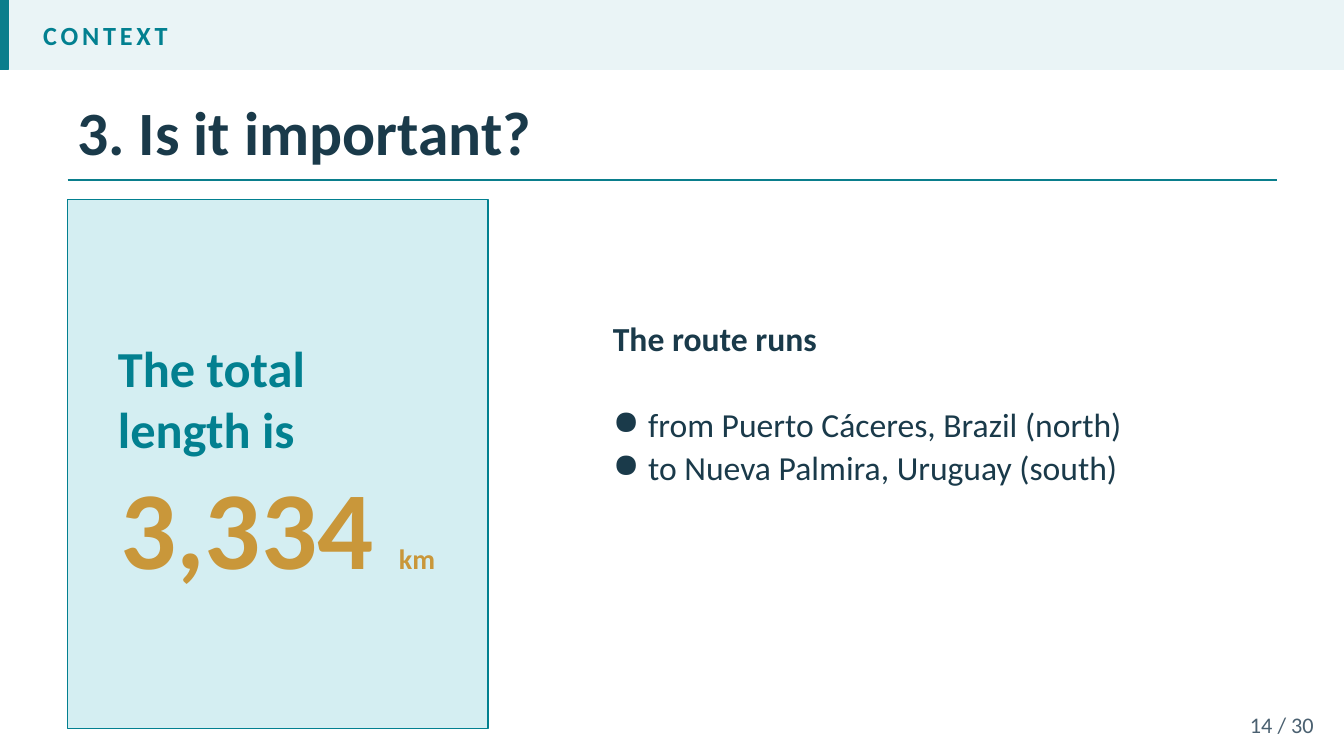
"""Build the slide on the length and course of the route."""
import pptx
import pptx.dml.color
import pptx.enum.shapes
import pptx.enum.text
import pptx.oxml.ns
import pptx.util
from lxml import etree

Inches = pptx.util.Inches
Pt = pptx.util.Pt
RGBColor = pptx.dml.color.RGBColor
PP_ALIGN = pptx.enum.text.PP_ALIGN
qn = pptx.oxml.ns.qn

FONT = "Calibri"
WHITE = RGBColor(0xFF, 0xFF, 0xFF)
BAND = RGBColor(0xEA, 0xF4, 0xF6)
ACCENT = RGBColor(0x0A, 0x7E, 0x8C)
TEAL = RGBColor(0x02, 0x80, 0x90)
PANEL = RGBColor(0xD4, 0xEE, 0xF2)
NAVY = RGBColor(0x1A, 0x3A, 0x4A)
GOLD = RGBColor(0xC9, 0x97, 0x3A)
SLATE = RGBColor(0x4A, 0x60, 0x70)


def style(font, size, color, bold=False):
    """Set the typeface, size, colour and weight of a font."""
    font.name = FONT
    font.size = Pt(size)
    font.color.rgb = color
    font.bold = bold


def add_panel(slide, left, top, width, height, fill, line):
    """Add a filled and outlined rectangle."""
    panel = slide.shapes.add_shape(
        pptx.enum.shapes.MSO_SHAPE.RECTANGLE,
        Inches(left), Inches(top), Inches(width), Inches(height))
    panel.shadow.inherit = False
    panel.fill.solid()
    panel.fill.fore_color.rgb = fill
    panel.line.color.rgb = line
    panel.line.width = Pt(1)
    return panel


def add_text(slide, left, top, width, height, text, size, color, bold=False):
    """Add a wrapped, vertically centred text box and return its frame."""
    frame = slide.shapes.add_textbox(
        Inches(left), Inches(top), Inches(width), Inches(height)).text_frame
    frame.word_wrap = True
    frame.vertical_anchor = pptx.enum.text.MSO_ANCHOR.MIDDLE
    frame.text = text
    style(frame.paragraphs[0].runs[0].font, size, color, bold)
    return frame


def add_rule(slide, left, right, y):
    """Add the horizontal rule under the title."""
    rule = slide.shapes.add_connector(
        pptx.enum.shapes.MSO_CONNECTOR.STRAIGHT,
        Inches(left), Inches(y), Inches(right), Inches(y))
    rule.line.color.rgb = ACCENT
    rule.line.width = Pt(1.5)
    etree.SubElement(rule._element.spPr, qn("a:effectLst"))


def add_bullet(frame, text, space_before):
    """Append a bulleted paragraph with a hanging indent."""
    paragraph = frame.add_paragraph()
    properties = paragraph._p.get_or_add_pPr()
    properties.set("marL", str(Inches(0.35)))
    properties.set("indent", str(-Inches(0.35)))
    etree.SubElement(properties, qn("a:buChar"), char="●")
    paragraph.text = text
    paragraph.space_before = Pt(space_before)
    style(paragraph.runs[0].font, 24, NAVY)


def add_length_panel(slide):
    """Add the panel that states the total length."""
    frame = add_panel(slide, 0.67, 1.98, 4.17, 5.25, PANEL, TEAL).text_frame
    frame.word_wrap = True
    frame.vertical_anchor = pptx.enum.text.MSO_ANCHOR.MIDDLE
    frame.margin_left = frame.margin_right = Inches(0.5)
    frame.margin_top = frame.margin_bottom = Inches(0.5)
    frame.text = "The total length is"
    caption = frame.paragraphs[0]
    caption.alignment = PP_ALIGN.LEFT
    style(caption.runs[0].font, 36, TEAL, True)
    length = frame.add_paragraph()
    length.alignment = PP_ALIGN.CENTER
    for text, size in (("3,334 ", 79.2), ("km", 20)):
        run = length.add_run()
        run.text = text
        style(run.font, size, GOLD, True)


def add_route(slide):
    """Add the heading and bullets that describe the route."""
    route = add_text(slide, 5.98, 3, 6.49, 2.42, "The route runs", 24, NAVY, True)
    route.margin_bottom = Inches(0.48)
    add_bullet(route, "from Puerto Cáceres, Brazil (north)", 33)
    add_bullet(route, "to Nueva Palmira, Uruguay (south)", 2)


def main():
    """Build and save the presentation."""
    deck = pptx.Presentation()
    deck.slide_width = Inches(13.33)
    deck.slide_height = Inches(7.5)
    slide = deck.slides.add_slide(deck.slide_layouts[6])
    slide.background.fill.solid()
    slide.background.fill.fore_color.rgb = WHITE

    add_panel(slide, 0, 0, 13.33, 0.69, BAND, BAND)
    add_panel(slide, 0, 0, 0.08, 0.69, ACCENT, ACCENT)
    section = add_text(slide, 0.33, 0, 12.7, 0.69, "CONTEXT", 18.7, TEAL, True)
    section.paragraphs[0].runs[0].font._element.set("spc", "270")
    add_text(slide, 0.67, 0.83, 12, 0.93, "3. Is it important?", 44, NAVY, True)
    add_rule(slide, 0.67, 12.67, 1.79)
    add_length_panel(slide)
    add_route(slide)
    page = add_text(slide, 12, 7, 1.13, 0.37, "14 / 30", 15.9, SLATE)
    page.paragraphs[0].alignment = PP_ALIGN.RIGHT

    deck.save("out.pptx")


if __name__ == "__main__":
    main()
